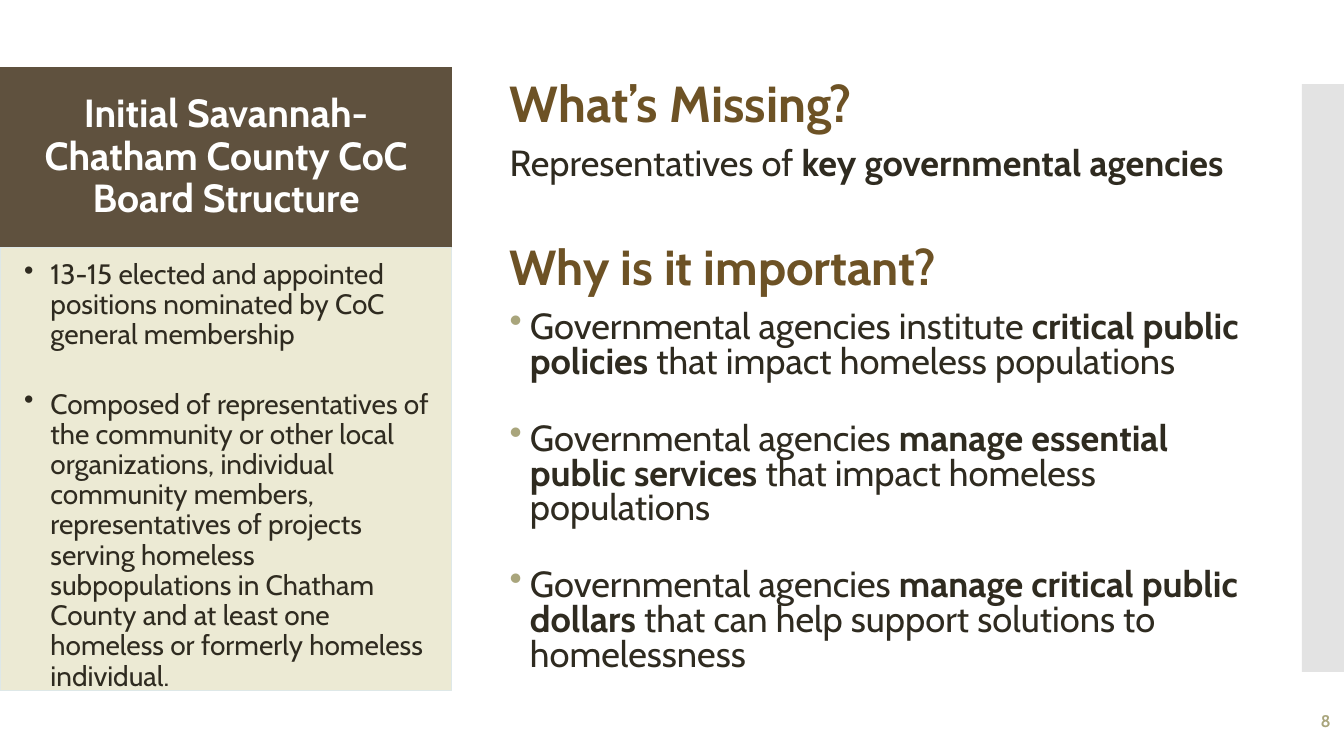
from lxml import etree
from pptx import Presentation
from pptx.dml.color import RGBColor
from pptx.enum.shapes import MSO_SHAPE
from pptx.enum.text import MSO_ANCHOR, PP_ALIGN
from pptx.oxml.ns import qn
from pptx.util import Inches, Pt

RECTANGLE = MSO_SHAPE.RECTANGLE
TOP, MIDDLE = MSO_ANCHOR.TOP, MSO_ANCHOR.MIDDLE
LEFT, CENTER, RIGHT = PP_ALIGN.LEFT, PP_ALIGN.CENTER, PP_ALIGN.RIGHT

THEME = {
    "font": "Cabin",
    "ink": "2F2B20", "white": "FFFFFF", "heading": "6D5225", "accent": "A9A57C",
    "banner": "5F513E", "panel": "ECEAD4", "panel_line": "DEE8E8", "strip": "C8C8C8",
    "title_size": 28, "panel_size": 20, "body_size": 25.9,
    "missing_size": 36.1, "important_size": 35.1, "number_size": 12,
}

presentation = Presentation()
presentation.slide_width = Inches(13.33)
presentation.slide_height = Inches(7.5)
column = presentation.slide_width / 160
row = presentation.slide_height / 90
slide = presentation.slides.add_slide(presentation.slide_layouts[6])


def write(paragraph, pieces, size, color, spacing, alignment=LEFT, bullet=None):
    paragraph.alignment = alignment
    paragraph.line_spacing = spacing
    if bullet:
        margin, bullet_color = bullet
        properties = paragraph._p.get_or_add_pPr()
        properties.set("marL", str(Inches(margin[0])))
        properties.set("indent", str(-Inches(margin[1])))
        color_element = etree.SubElement(properties, qn("a:buClr"))
        etree.SubElement(color_element, qn("a:srgbClr"), val=bullet_color)
        etree.SubElement(properties, qn("a:buChar"), char="•")
    for text, bold in pieces:
        run = paragraph.add_run()
        run.text = text
        run.font.name = THEME["font"]
        run.font.size = Pt(size)
        run.font.bold = bold
        run.font.color.rgb = RGBColor.from_string(color)


def place(grid, fill=None, anchor=MIDDLE, insets=(0.1, 0.05, 0.1, 0.05)):
    left, top, width, height = grid
    box = [round(left * column), round(top * row), round(width * column), round(height * row)]
    if fill:
        shape = slide.shapes.add_shape(RECTANGLE, *box)
        shape.shadow.inherit = False
        shape.fill.solid()
        shape.fill.fore_color.rgb = RGBColor.from_string(fill)
        shape.line.fill.background()
    else:
        shape = slide.shapes.add_textbox(*box)
    frame = shape.text_frame
    frame.word_wrap = True
    frame.vertical_anchor = anchor
    (frame.margin_left, frame.margin_top,
     frame.margin_right, frame.margin_bottom) = [Inches(inset) for inset in insets]
    return shape


strip = place((155, 10, 5, 70), THEME["strip"])
strip_color = strip.fill._xPr.find(qn("a:solidFill")).find(qn("a:srgbClr"))
etree.SubElement(strip_color, qn("a:alpha"), val="50000")

title = place((0, 8, 53.8, 21.5), THEME["banner"], insets=(0.22, 0.12, 0.22, 0.12))
write(title.text_frame.paragraphs[0],
      [("Initial Savannah-Chatham County CoC Board Structure", True)],
      THEME["title_size"], THEME["white"], 0.9, CENTER)

panel = place((0, 29.5, 53.8, 52.7), THEME["panel"], TOP, (0.12, 0.12, 0.16, 0.17))
panel.line.color.rgb = RGBColor.from_string(THEME["panel_line"])
panel.line.width = Pt(0.85)
board_points = [
    "13-15 elected and appointed positions nominated by CoC general membership",
    "Composed of representatives of the community or other local organizations, "
    "individual community members, representatives of projects serving homeless "
    "subpopulations in Chatham County and at least one homeless or formerly "
    "homeless individual.",
]
for index, point in enumerate(board_points):
    frame = panel.text_frame
    paragraph = frame.add_paragraph() if index else frame.paragraphs[0]
    write(paragraph, [(point, False)], THEME["panel_size"], THEME["ink"], 0.9,
          bullet=((0.38, 0.26), THEME["ink"]))
    if index:
        paragraph.space_before = Pt(28)

body = place((59.5, 7, 92.6, 76.2)).text_frame
write(body.paragraphs[0], [("What’s Missing?", True)],
      THEME["missing_size"], THEME["heading"], 0.8)

agencies = body.add_paragraph()
write(agencies, [("Representatives of ", False), ("key governmental agencies", True)],
      THEME["body_size"], THEME["ink"], 0.8)
agencies.space_before = Pt(12)

important = body.add_paragraph()
write(important, [("Why is it important?", True)],
      THEME["important_size"], THEME["heading"], 0.8)
important.space_before = Pt(46)

reasons = [
    ("institute ", "critical public policies", " that impact homeless populations"),
    ("", "manage essential public services ", "that impact homeless populations"),
    ("", "manage critical public dollars ",
     "that can help support solutions to homelessness"),
]
for verb, emphasis, ending in reasons:
    paragraph = body.add_paragraph()
    write(paragraph,
          [("Governmental agencies " + verb, False), (emphasis, True), (ending, False)],
          THEME["body_size"], THEME["ink"], 0.8, bullet=((0.2, 0.2), THEME["accent"]))
    paragraph.space_before = Pt(12)
    paragraph.space_after = Pt(18)

page_number = place((139.6, 83.4, 20, 4.8))
write(page_number.text_frame.paragraphs[0], [("8", True)],
      THEME["number_size"], THEME["accent"], 1.0, RIGHT)

presentation.save("out.pptx")
